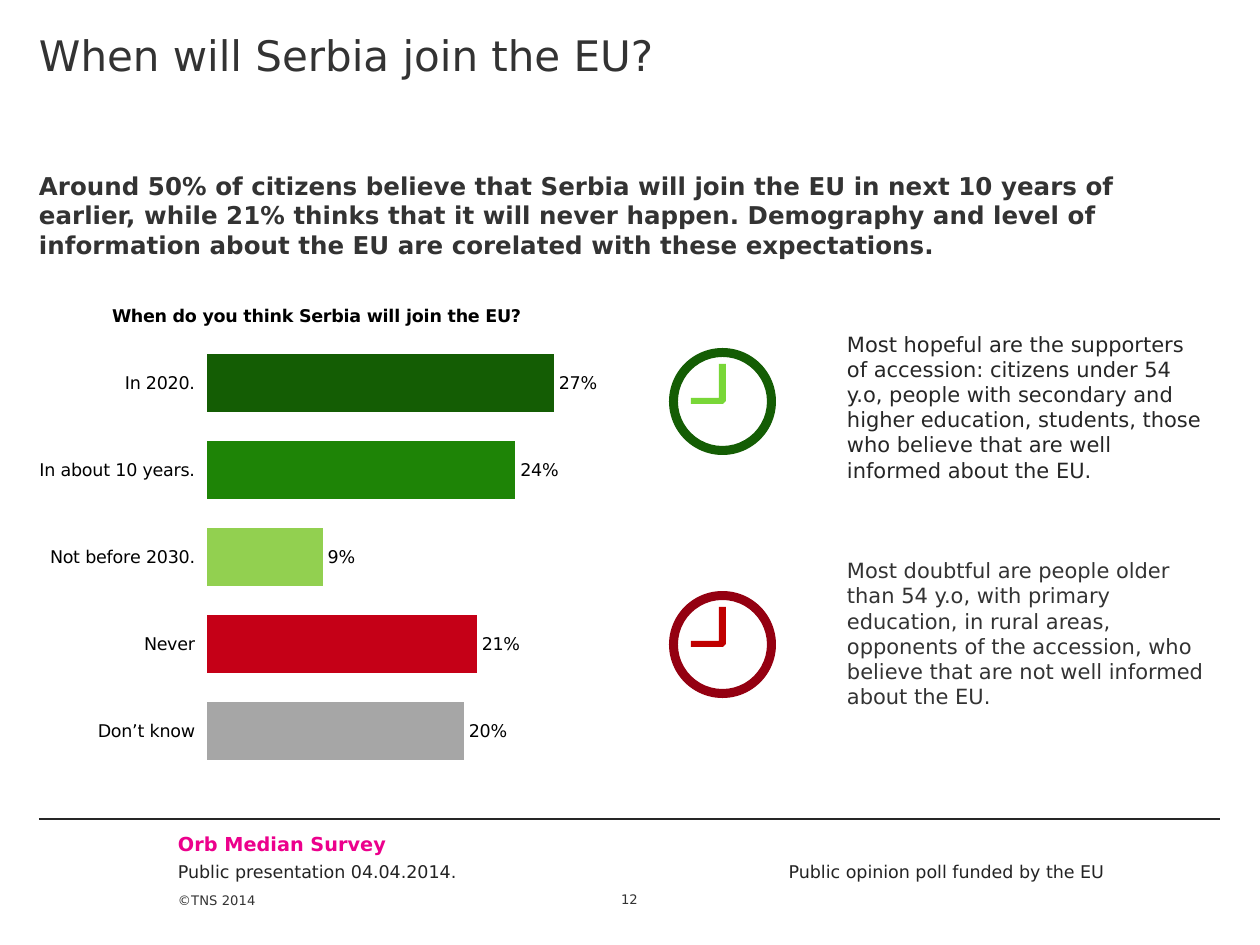
"""Build the slide on when citizens expect Serbia to join the EU."""
from dataclasses import dataclass

from lxml import etree
from pptx import Presentation
from pptx.chart.data import CategoryChartData
from pptx.dml.color import RGBColor
from pptx.enum.chart import XL_CHART_TYPE, XL_LABEL_POSITION
from pptx.enum.shapes import MSO_CONNECTOR, MSO_SHAPE
from pptx.enum.text import MSO_ANCHOR, MSO_AUTO_SIZE, PP_ALIGN
from pptx.oxml import parse_xml
from pptx.oxml.ns import nsdecls, qn
from pptx.util import Pt

EMU_PER_PX = 914400 / 126
BAR = XL_CHART_TYPE.BAR_CLUSTERED
OUTSIDE_END = XL_LABEL_POSITION.OUTSIDE_END
STRAIGHT = MSO_CONNECTOR.STRAIGHT
DONUT = MSO_SHAPE.DONUT
TOP, MIDDLE, BOTTOM = MSO_ANCHOR.TOP, MSO_ANCHOR.MIDDLE, MSO_ANCHOR.BOTTOM
LEFT, CENTER, RIGHT = PP_ALIGN.LEFT, PP_ALIGN.CENTER, PP_ALIGN.RIGHT
NO_FIT = MSO_AUTO_SIZE.NONE

RING_SIZE, RING_WIDTH = 107, 9
HANDS = [(50, 16), (50, 50), (22, 50), (22, 56), (54, 56), (57, 53), (57, 16)]
ANSWERS = [
    ("In 2020.", 27, "145D04"),
    ("In about 10 years.", 24, "1E8406"),
    ("Not before 2030.", 9, "92D050"),
    ("Never", 21, "C50017"),
    ("Don’t know", 20, "A6A6A6"),
]
SUMMARY = (
    "Around 50% of citizens believe that Serbia will join the EU in next 10 years of "
    "earlier, while 21% thinks that it will never happen. Demography and level of "
    "information about the EU are corelated with these expectations."
)
HOPEFUL = (
    "Most hopeful are the supporters of accession: citizens under 54 y.o, people with "
    "secondary and higher education, students, those who believe that are well "
    "informed about the EU."
)
DOUBTFUL = (
    "Most doubtful are people older than 54 y.o, with primary education, in rural "
    "areas, opponents of the accession, who believe that are not well informed about "
    "the EU."
)


@dataclass(frozen=True)
class Theme:
    font: str = "DejaVu Sans"
    text: str = "333333"
    dark: str = "262626"
    footer: str = "232323"
    accent: str = "EC008C"
    black: str = "000000"
    hopeful_ring: str = "145D04"
    hopeful_hands: str = "79D738"
    doubtful_ring: str = "940011"
    doubtful_hands: str = "C00000"
    title_size: float = 24
    lead_size: float = 14
    body_size: float = 12
    brand_size: float = 11
    label_size: float = 10
    small_size: float = 7.5


def px(length):
    return round(length * EMU_PER_PX)


class SlideBuilder:
    def __init__(self, page, theme):
        self.page = page
        self.theme = theme

    def style(self, font, size, color, bold=False):
        font.name, font.size, font.bold = self.theme.font, Pt(size), bold
        font.color.rgb = RGBColor.from_string(color)

    def fill_shape(self, shape, color):
        shape.shadow.inherit = False
        shape.fill.solid()
        shape.fill.fore_color.rgb = RGBColor.from_string(color)
        shape.line.fill.background()

    def set_text(self, shape, texts, size, colors, bold=False, align=LEFT,
                 anchor=TOP, insets=(0, 0, 0, 0), gap=0):
        frame = shape.text_frame
        frame.text = "\n".join(texts)
        frame.word_wrap, frame.auto_size = True, NO_FIT
        frame.vertical_anchor = anchor
        (frame.margin_left, frame.margin_top,
         frame.margin_right, frame.margin_bottom) = map(px, insets)
        for index, (para, color) in enumerate(zip(frame.paragraphs, colors)):
            para.alignment = align
            para.space_before = Pt(gap if index else 0)
            for span in para.runs:
                self.style(span.font, size, color, bold)

    def placeholder(self, index, text, area, size, bold=False):
        box = self.page.placeholders[index]
        box.left, box.top, box.width, box.height = map(px, area)
        self.set_text(box, [text], size, [self.theme.text], bold, insets=(0, 29, 0, 0))
        for para in box.text_frame.paragraphs:
            properties = para._p.get_or_add_pPr()
            properties.set("marL", "0")
            properties.set("indent", "0")
            etree.SubElement(properties, qn("a:buNone"))

    def textbox(self, texts, area, size, colors, **options):
        box = self.page.shapes.add_textbox(*map(px, area))
        self.set_text(box, texts, size, colors, **options)

    def rule(self, left, right, top):
        line = self.page.shapes.add_connector(STRAIGHT, *map(px, (left, top, right, top)))
        line.line.width = Pt(0.75)
        line.line.color.rgb = RGBColor.from_string(self.theme.dark)
        etree.SubElement(line._element.spPr, qn("a:effectLst"))

    def clock(self, left, top, ring_color, hands_color):
        group = self.page.shapes.add_group_shape()
        ring = group.shapes.add_shape(DONUT, *map(px, (left, top, RING_SIZE, RING_SIZE)))
        ring.adjustments[0] = RING_WIDTH / RING_SIZE
        self.fill_shape(ring, ring_color)
        start, *corners = [(left + x, top + y) for x, y in HANDS]
        outline = group.shapes.build_freeform(*start, scale=EMU_PER_PX)
        outline.add_line_segments(corners)
        self.fill_shape(outline.convert_to_shape(), hands_color)

    def bar_chart(self, title, answers, area):
        theme = self.theme
        data = CategoryChartData()
        data.categories = [name for name, _, _ in answers]
        data.add_series("Series 1", [value for _, value, _ in answers])
        chart = self.page.shapes.add_chart(BAR, *map(px, area), data).chart
        self.style(chart.font, theme.label_size, theme.black)
        chart.has_legend = False
        chart.has_title = True
        chart.chart_title.include_in_layout = False
        chart.chart_title.text_frame.text = title
        heading = chart.chart_title.text_frame.paragraphs[0].runs[0]
        self.style(heading.font, theme.label_size, theme.black, bold=True)
        chart.category_axis.reverse_order = True
        chart.category_axis.format.line.fill.background()
        axis = chart.value_axis
        axis.visible = axis.has_major_gridlines = False
        axis.minimum_scale, axis.maximum_scale = 0, 30
        plot = chart.plots[0]
        plot.gap_width, plot.vary_by_categories = 50, False
        plot.has_data_labels = True
        labels = plot.data_labels
        labels.show_value, labels.position = True, OUTSIDE_END
        labels.number_format, labels.number_format_is_linked = r"0\%", False
        self.style(labels.font, theme.label_size, theme.black)
        for index, (_, _, color) in enumerate(answers):
            bar = plot.series[0].points[index].format
            bar.fill.solid()
            bar.fill.fore_color.rgb = RGBColor.from_string(color)
        self.place_plot(chart, x=0.31, y=0.11, w=0.67, h=0.87)

    def place_plot(self, chart, **shares):
        plot_area = chart._chartSpace.chart.plotArea
        for layout in plot_area.findall(qn("c:layout")):
            plot_area.remove(layout)
        values = "".join(f'<c:{key} val="{share}"/>' for key, share in shares.items())
        plot_area.insert(0, parse_xml(
            f'<c:layout {nsdecls("c")}><c:manualLayout><c:layoutTarget val="inner"/>'
            f'<c:xMode val="edge"/><c:yMode val="edge"/>{values}'
            '</c:manualLayout></c:layout>'))


def main():
    theme = Theme()
    deck = Presentation()
    deck.slide_width, deck.slide_height = px(1260), px(945)
    slide = SlideBuilder(deck.slides.add_slide(deck.slide_layouts[1]), theme)

    slide.placeholder(0, "When will Serbia join the EU?", (39, 0, 1181, 142), theme.title_size)
    slide.placeholder(1, SUMMARY, (39, 142, 1181, 105), theme.lead_size, bold=True)
    slide.bar_chart("When do you think Serbia will join the EU?", ANSWERS, (29, 285, 575, 500))
    slide.clock(669, 348, theme.hopeful_ring, theme.hopeful_hands)
    slide.clock(669, 591, theme.doubtful_ring, theme.doubtful_hands)
    slide.textbox([HOPEFUL, DOUBTFUL], (834, 314, 384, 437), theme.body_size,
                  [theme.dark, theme.text], anchor=MIDDLE, insets=(13, 6, 13, 31), gap=43)

    slide.rule(39, 1220, 819)
    slide.textbox(["Orb Median Survey"], (178, 832, 417, 24), theme.brand_size,
                  [theme.accent], bold=True)
    slide.textbox(["Public presentation 04.04.2014."], (178, 861, 428, 22),
                  theme.label_size, [theme.footer])
    slide.textbox(["Public opinion poll funded by the EU"], (676, 861, 428, 22),
                  theme.label_size, [theme.footer], align=RIGHT)
    slide.textbox(["©TNS 2014"], (178, 872, 105, 73), theme.small_size, [theme.text],
                  anchor=BOTTOM, insets=(0, 0, 0, 37))
    slide.textbox(["12"], (595, 872, 69, 35), theme.small_size, [theme.text],
                  align=CENTER, anchor=BOTTOM)
    deck.save("out.pptx")


if __name__ == "__main__":
    main()
